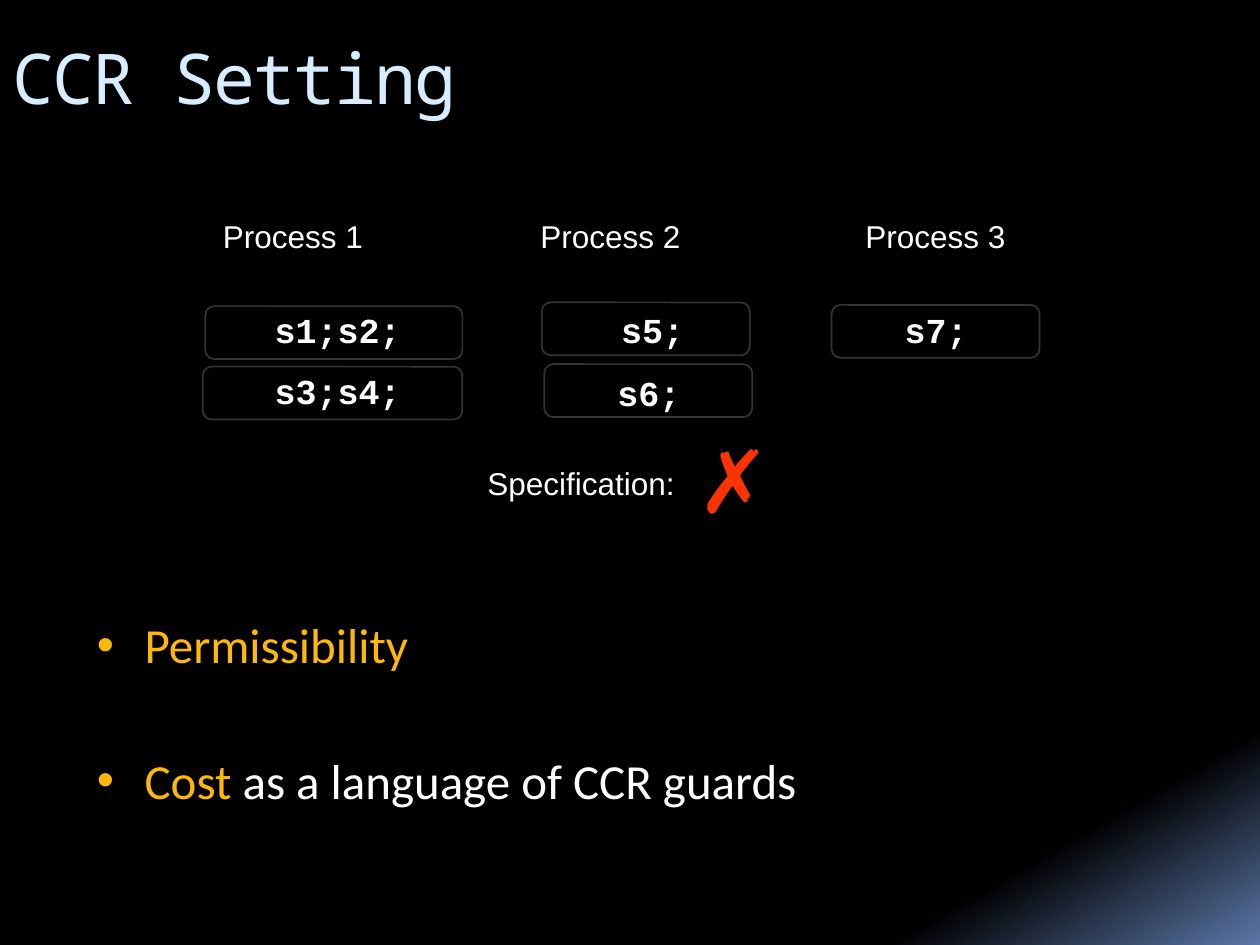
import pptx
import pptx.util
import pptx.dml.color
import pptx.enum.shapes
import pptx.enum.text
from lxml import etree

Inches, Pt = pptx.util.Inches, pptx.util.Pt
COLORS = {
    "black": "000000", "glow": "5B77A8", "title": "D6ECFF", "text": "FFFFFF",
    "accent": "FEB80A", "outline": "333333", "cross": "FF3300",
}


def rgb(name):
    return pptx.dml.color.RGBColor.from_string(COLORS[name])


def style(r, size, font, color="text", bold=False):
    r.font.size = Pt(size)
    r.font.name = font
    r.font.bold = bold
    r.font.color.rgb = rgb(color)


def set_background(s):
    fill = s.background.fill
    fill.gradient()
    fill.gradient_angle = 300
    for stop, position, color in zip(fill.gradient_stops, (0.87, 1), ("black", "glow")):
        stop.position = position
        stop.color.rgb = rgb(color)


def add_box(s, x, y, w, h, wrap=True):
    tf = s.shapes.add_textbox(Inches(x), Inches(y), Inches(w), Inches(h)).text_frame
    tf.word_wrap = wrap
    return tf


def add_label(s, text, x, y, w, h, size=18, color="text"):
    tf = add_box(s, x, y, w, h, wrap=False)
    tf.text = text
    style(tf.paragraphs[0].runs[0], size, "Arial", color)


def add_code(s, text, x, y, w):
    tf = add_box(s, x, y, w, 0.43)
    tf.margin_left = Inches(0.6)
    tf.text = text
    style(tf.paragraphs[0].runs[0], 20, "Courier New", bold=True)


def add_frame(s, x, y, w):
    sp = s.shapes.add_shape(
        pptx.enum.shapes.MSO_SHAPE.FLOWCHART_ALTERNATE_PROCESS,
        Inches(x), Inches(y), Inches(w), Inches(0.42))
    sp.shadow.inherit = False
    sp.fill.background()
    sp.line.color.rgb = rgb("outline")
    sp.line.width = Pt(1)


def add_bullet(p, parts, space_before):
    p.space_before = Pt(space_before)
    for text, color in parts:
        r = p.add_run()
        r.text = text
        style(r, 28, "Calibri", color)
    pPr = p._p.get_or_add_pPr()
    pPr.set("marL", str(Inches(0.38)))
    pPr.set("indent", str(-Inches(0.38)))
    ns = "{http://schemas.openxmlformats.org/drawingml/2006/main}"
    etree.SubElement(pPr, ns + "buFont", typeface="Arial")
    etree.SubElement(pPr, ns + "buChar", char="•")


def main():
    prs = pptx.Presentation()
    prs.slide_width, prs.slide_height = Inches(10), Inches(7.5)
    s = prs.slides.add_slide(prs.slide_layouts[6])
    set_background(s)

    # Title
    tf = add_box(s, 0, 0.13, 9.5, 0.95)
    tf.vertical_anchor = pptx.enum.text.MSO_ANCHOR.MIDDLE
    tf.text = "CCR Setting"
    r = tf.paragraphs[0].runs[0]
    style(r, 40, "Noto Sans Mono", "title")
    r._r.get_or_add_rPr().set("spc", "-100")

    # Process headings
    for i, x in enumerate((1.67, 4.19, 6.77), 1):
        add_label(s, f"Process {i}", x, 1.67, 1.31, 0.4)

    # Statements: text, text box (x, y, w), frame (x, y, w)
    statements = [
        ("s1;s2;", (1.58, 2.4, 2.17), (1.63, 2.43, 2.04)),
        ("s3;s4;", (1.58, 2.88, 2.17), (1.61, 2.91, 2.06)),
        ("s5;", (4.33, 2.4, 1.67), (4.3, 2.4, 1.65)),
        ("s6;", (4.3, 2.9, 1.67), (4.32, 2.89, 1.65)),
        ("s7;", (6.58, 2.4, 2.17), (6.6, 2.42, 1.65)),
    ]
    for text, box, frame in statements:
        add_frame(s, *frame)
        add_code(s, text, *box)

    # Specification verdict
    add_label(s, "Specification:", 3.77, 3.63, 1.69, 0.4)
    add_label(s, "✗", 5.44, 3.33, 0.64, 0.93, 50, "cross")

    # Bullets
    tf = add_box(s, 0.67, 4.83, 7.5, 2.5)
    add_bullet(tf.paragraphs[0], [("Permissibility", "accent")], 5.6)
    add_bullet(tf.add_paragraph(),
               [("Cost ", "accent"), ("as a language of CCR guards", "text")], 44)

    prs.save("out.pptx")


if __name__ == "__main__":
    main()
